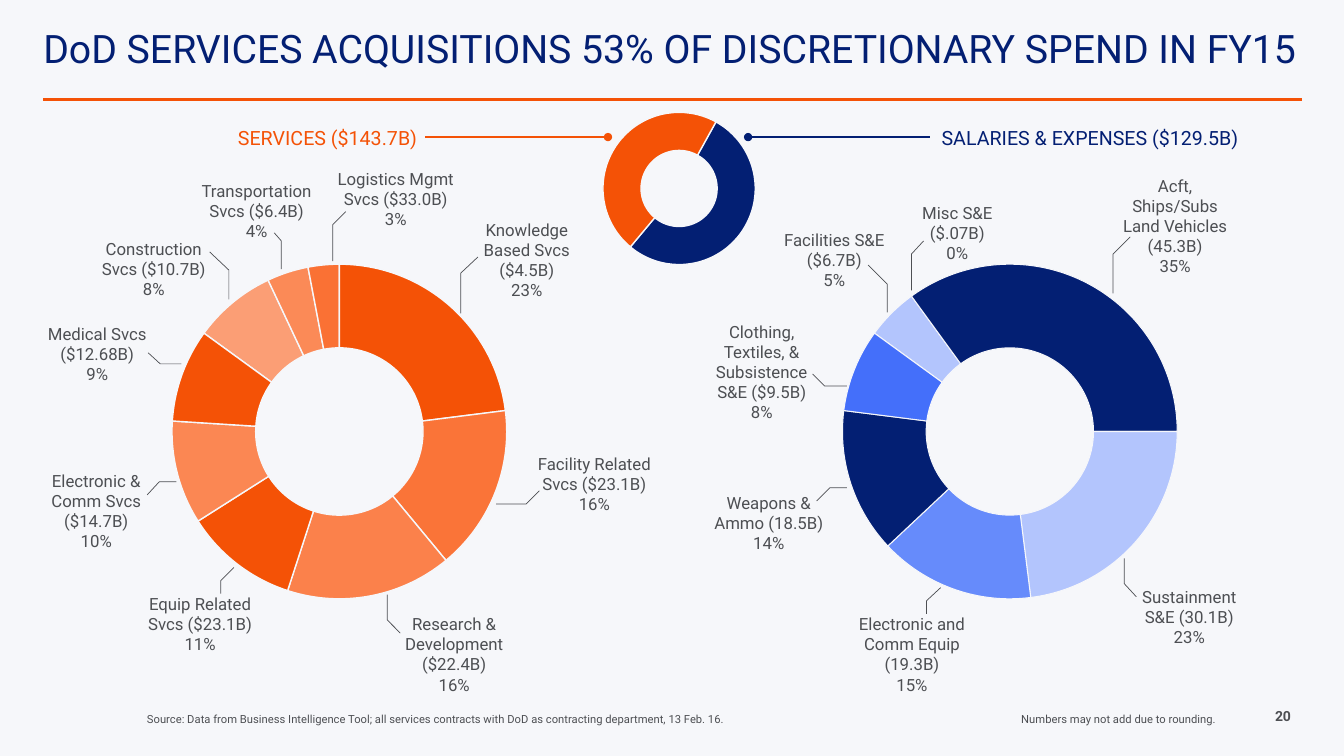
from lxml import etree
from pptx import Presentation
from pptx.chart.data import CategoryChartData
from pptx.dml.color import RGBColor
from pptx.enum.chart import XL_CHART_TYPE as ChartType
from pptx.enum.shapes import MSO_CONNECTOR as Connector
from pptx.enum.text import MSO_ANCHOR as Anchor, MSO_AUTO_SIZE as AutoSize, PP_ALIGN as Align
from pptx.oxml import parse_xml
from pptx.oxml.ns import nsdecls, qn
from pptx.util import Inches, Pt

COLORS = {
    "background": "F6F7FA", "text": "4D4F53", "navy": "031F73", "orange": "F45206",
    "orange 2": "FA7134", "orange 3": "FA7438", "orange 4": "FB814B",
    "orange 5": "FB8753", "orange 6": "FB8A57", "orange 7": "FB9E75",
    "blue": "446FFA", "light blue": "668BFB", "pale blue": "B3C5FD",
}
FONT = "Roboto"
CATEGORY_COUNT = 9
LABEL_COLUMNS = 14.1

# Label text, share, label corner, leader points (ring, elbow, label)
SERVICES = [
    ("Construction Svcs ($10.7B)", "8%", (8.2, 23.2), [(22.7, 29.7), (22.7, 26.8), (20.8, 25)]),
    ("Transportation Svcs ($6.4B)", "4%", (18.4, 17.4), [(27.9, 26.7), (27.9, 23.9), (27.2, 23.1)]),
    ("Logistics Mgmt Svcs ($33.0B)", "3%", (32.2, 16.2), [(33, 25.9), (33, 22.3), (34.3, 21)]),
    ("Knowledge Based Svcs ($4.5B)", "23%", (45.2, 21.3), [(45.7, 31.1), (45.7, 27.1), (47.4, 25.5)]),
    ("Facility Related Svcs ($23.1B)", "16%", (51.9, 44.5), [(49.2, 50), (52.2, 50), (53.5, 48.7)]),
    ("Research & Development ($22.4B)", "16%", (38, 60.4), [(38.4, 59), (38.4, 61.5), (39.7, 62.8)]),
    ("Equip Related Svcs ($23.1B)", "11%", (12.8, 58.4), [(23.2, 56.3), (21.9, 57.6), (21.9, 58.9)]),
    ("Electronic & Comm Svcs ($14.7B)", "10%", (2.5, 46.2), [(17.5, 47.8), (15.8, 47.8), (14.6, 49.1)]),
    ("Medical Svcs ($12.68B)", "9%", (2.6, 31.6), [(18, 36.1), (15.9, 36.1), (14.7, 35)]),
]
SALARIES = [
    ("Facilities S&E ($6.7B)", "5%", (75.7, 22.3), [(88, 31), (88, 28.2), (86.1, 26.3)]),
    ("Misc S&E ($.07B)", "0%", (87.9, 19.6), [(90.4, 28.8), (90.4, 25.2), (91.6, 23.9)]),
    ("Acft, Ships/Subs Land Vehicles (45.3B)", "35%", (109.5, 16.9),
     [(110.4, 29.1), (110.4, 25.2), (112.1, 23.5)]),
    ("Sustainment S&E (30.1B)", "23%", (110.9, 57.7), [(111.5, 55.4), (111.5, 57.9), (112.7, 59.2)]),
    ("Electronic and Comm Equip (19.3B)", "15%", (83.4, 60.4), [(93.3, 58.3), (91.9, 59.6), (91.9, 60.9)]),
    ("Weapons & Ammo (18.5B)", "14%", (69.2, 48.4), [(84, 48.4), (82.3, 48.4), (81, 49.7)]),
    ("Clothing, Textiles, & Subsistence S&E ($9.5B)", "8%", (68.5, 31.4),
     [(84, 38.3), (81.8, 38.3), (80.6, 37.1)]),
]
SERVICE_COLORS = ["orange 7", "orange 6", "orange 2", "orange", "orange 3",
                  "orange 4", "orange", "orange 5", "orange"]
SALARY_COLORS = ["pale blue", "orange 6", "navy", "pale blue", "light blue", "navy", "blue"]


def grid(units):
    """Length of a number of columns or rows, ten to the inch."""
    return Inches(units / 10)


def rgb(name):
    return RGBColor.from_string(COLORS[name])


def add_text(slide, box, lines, size=12, color="text", align=Align.CENTER,
             wrap=True, bold=False, autosize=AutoSize.SHAPE_TO_FIT_TEXT):
    shape = slide.shapes.add_textbox(*map(grid, box))
    frame = shape.text_frame
    frame.word_wrap = wrap
    frame.auto_size = autosize
    for index, line in enumerate(lines):
        paragraph = frame.add_paragraph() if index else frame.paragraphs[0]
        paragraph.alignment = align
        run = paragraph.add_run()
        run.text = line
        run.font.name = FONT
        run.font.size = Pt(size)
        run.font.bold = bold
        run.font.color.rgb = rgb(color)
    return shape


def add_title(slide, text):
    shape = add_text(slide, (4.3, -0.1, 133.3, 10.5), [text], 28, "navy", Align.LEFT,
                     autosize=AutoSize.NONE)
    frame = shape.text_frame
    frame.vertical_anchor = Anchor.MIDDLE
    frame.margin_left = 0
    frame.margin_right = grid(2)
    frame.margin_top = frame.margin_bottom = grid(1)
    frame.paragraphs[0].line_spacing = 0.8


def add_line(slide, start, end, color, width, dot=False):
    line = slide.shapes.add_connector(Connector.STRAIGHT, *map(grid, start + end))
    line.line.color.rgb = rgb(color)
    line.line.width = Pt(width)
    if dot:
        etree.SubElement(line.line._get_or_add_ln(), qn("a:tailEnd"), type="oval")
    etree.SubElement(line._element.spPr, qn("a:effectLst"))


def add_callout(slide, text, share, corner, leader):
    rows = 9.1 if len(text) > 27 else 7.1
    add_text(slide, (*corner, LABEL_COLUMNS, rows), [text, share])
    ring, *bends = [tuple(map(grid, point)) for point in leader]
    builder = slide.shapes.build_freeform(*ring, scale=1.0)
    builder.add_line_segments(bends, close=False)
    shape = builder.convert_to_shape()
    shape.shadow.inherit = False
    shape.fill.background()
    shape.line.color.rgb = rgb("text")
    shape.line.width = Pt(0.5)


def add_ring(slide, box, values, colors, start_angle, border=1):
    data = CategoryChartData()
    data.categories = [str(number + 1) for number in range(CATEGORY_COUNT)]
    data.add_series("Series 1", values + [None] * (CATEGORY_COUNT - len(values)))
    chart = slide.shapes.add_chart(ChartType.DOUGHNUT, *map(grid, box), data).chart
    chart.has_legend = False
    chart.has_title = False
    chart.font.name = "Lato"
    chart.font.size = Pt(10)
    chart.font.color.rgb = rgb("navy")
    plot = chart.plots[0]
    plot.vary_by_categories = True
    for index, color in enumerate(colors):
        slice_format = plot.series[0].points[index].format
        slice_format.fill.solid()
        slice_format.fill.fore_color.rgb = rgb(color)
        slice_format.line.color.rgb = rgb("background")
        slice_format.line.width = Pt(border)

    # Rotation, hole and plot area
    ring = plot._element
    for tag, value in (("c:firstSliceAng", start_angle), ("c:holeSize", 65)):
        ring.find(qn(tag)).set("val", str(value))
    area = ring.getparent()
    for layout in area.findall(qn("c:layout")):
        area.remove(layout)
    settings = [("layoutTarget", "inner"), ("xMode", "edge"), ("yMode", "edge"),
                ("x", 0.248), ("y", 0.056), ("w", 0.536), ("h", 0.804)]
    inner = "".join(f'<c:{tag} val="{value}"/>' for tag, value in settings)
    area.insert(0, parse_xml(
        f'<c:layout {nsdecls("c")}><c:manualLayout>{inner}</c:manualLayout></c:layout>'))


def main():
    presentation = Presentation()
    presentation.slide_width = Inches(13.33)
    presentation.slide_height = Inches(7.5)
    slide = presentation.slides.add_slide(presentation.slide_layouts[6])
    slide.background.fill.solid()
    slide.background.fill.fore_color.rgb = rgb("background")

    # Header
    add_line(slide, (4.3, 9.9), (129.1, 9.9), "orange", 2.25)
    add_title(slide, "DoD SERVICES ACQUISITIONS 53% OF DISCRETIONARY SPEND IN FY15")

    # Breakdown rings and their callouts
    add_ring(slide, (1, 23.9, 63.3, 41.3), [8, 4, 3, 23, 16, 16, 11, 10, 9], SERVICE_COLORS, 306)
    add_ring(slide, (67.5, 23.9, 63.3, 41.3), [5, 0, 35, 23, 15, 14, 8], SALARY_COLORS, 306, 0.75)
    for callout in SERVICES + SALARIES:
        add_callout(slide, *callout)

    # Overall split
    add_ring(slide, (52.5, 10.1, 28.8, 18.8), [53, 47], ["navy", "orange"], 29)
    add_text(slide, (92.4, 12, 33.9, 3.4), ["SALARIES & EXPENSES ($129.5B)"], 14, "navy", Align.LEFT)
    add_text(slide, (21.2, 12, 22.6, 3.4), ["SERVICES ($143.7B)"], 14, "orange")
    add_line(slide, (42.2, 13.6), (60.3, 13.6), "orange", 1.5, dot=True)
    add_line(slide, (92.2, 13.6), (74.2, 13.6), "navy", 1.5, dot=True)

    # Footer
    add_text(slide, (13.6, 70.2, 60, 2.3),
             ["Source: Data from Business Intelligence Tool; all services contracts with DoD "
              "as contracting department, 13 Feb. 16."], 8, align=Align.LEFT, wrap=False)
    add_text(slide, (100, 70.2, 21.6, 2.3), ["Numbers may not add due to rounding."], 8,
             align=Align.RIGHT, wrap=False)
    add_text(slide, (125.4, 69.7, 3.7, 2.7), ["20"], 10, wrap=False, bold=True)

    presentation.save("out.pptx")


if __name__ == "__main__":
    main()
